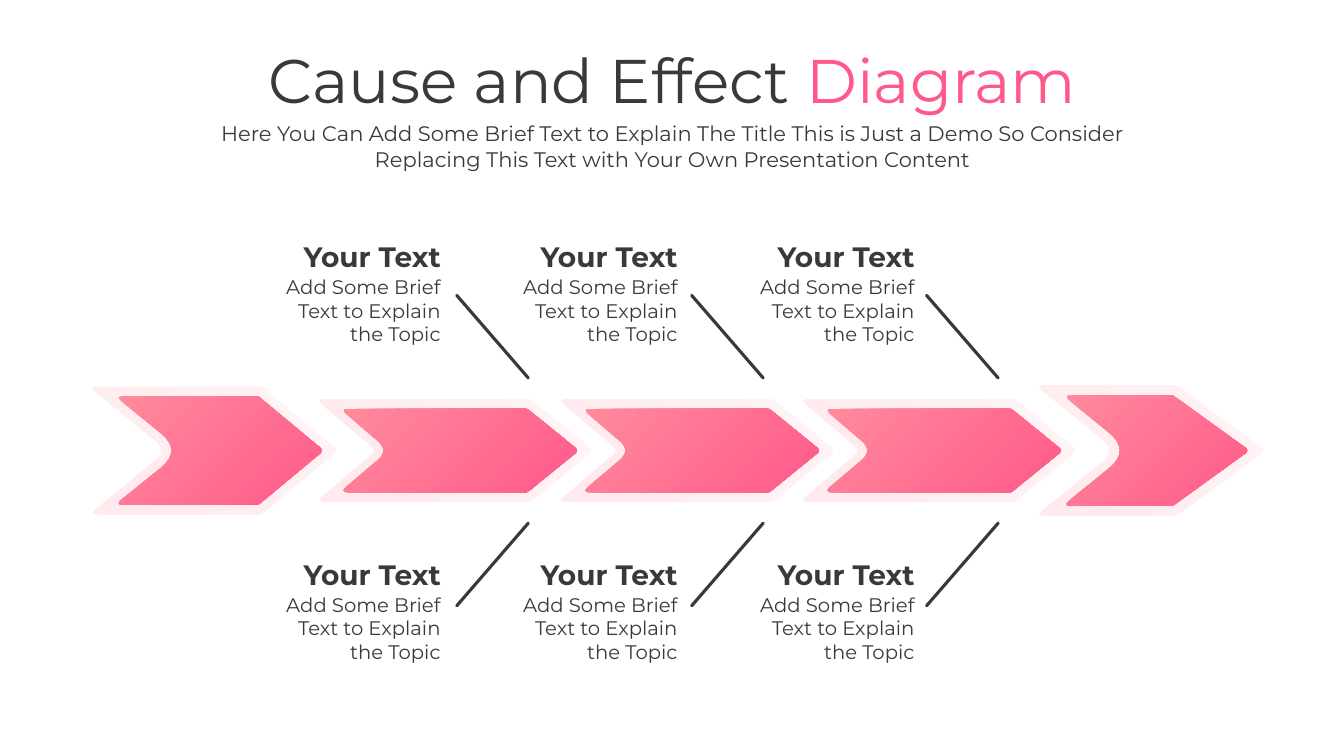
from dataclasses import dataclass

from lxml import etree
from pptx import Presentation
from pptx.dml.color import RGBColor
from pptx.enum.shapes import MSO_CONNECTOR
from pptx.enum.text import MSO_ANCHOR, MSO_AUTO_SIZE, PP_ALIGN
from pptx.oxml.ns import qn
from pptx.util import Inches, Pt

STRAIGHT = MSO_CONNECTOR.STRAIGHT
CENTER, RIGHT = PP_ALIGN.CENTER, PP_ALIGN.RIGHT
TOP, NO_FIT = MSO_ANCHOR.TOP, MSO_AUTO_SIZE.NONE


@dataclass(frozen=True)
class Theme:
    font: str = "Montserrat"
    ink: str = "3B3838"
    pink: tuple = ((0, "FF598A"), (1, "FF8A9C"))
    blush: tuple = ((0.1, "FFEBEE"), (1, "FFF3F5"))
    title: int = 44
    subtitle: int = 15
    heading: int = 20
    body: int = 14
    bone: float = 2.25


@dataclass(frozen=True)
class Box:
    left: float
    top: float
    width: float
    height: float

    @property
    def right(self):
        return self.left + self.width

    @property
    def bottom(self):
        return self.top + self.height

    @property
    def middle(self):
        return self.top + self.height / 2

    def inches(self):
        return [Inches(v) for v in (self.left, self.top, self.width, self.height)]


@dataclass(frozen=True)
class Arrow:
    """Chevron: box, shoulder distance from the tip, notch depth and its rounding."""
    box: Box
    shoulder: float
    notch: float
    notch_cut: float


THEME = Theme()
SLIDE_WIDTH, SLIDE_HEIGHT = 13.33, 7.5
AXIS = 4.47          # height of the spine
COLUMNS = 3
ARROW_STEP = 2.4
CAUSE_STEP = 2.35
BONE_STEP = 2.33
TAIL_OVERHANG, TIP_OVERHANG = 0.05, 0.02
TAIL_CUT, SHOULDER_CUT, TIP_CUT = 0.09, 0.02, 0.05
CURVE_STEPS = 8


def set_gradient(fill, stops, angle):
    fill.gradient()
    for stop, (position, color) in zip(fill.gradient_stops, stops):
        stop.position = position
        stop.color.rgb = RGBColor.from_string(color)
    fill.gradient_angle = angle


def make_radial(shape):
    """Spread the gradient in circles from the bottom right corner."""
    gradient = shape._element.spPr.find(qn("a:gradFill"))
    linear = gradient.find(qn("a:lin"))
    circle = etree.Element(qn("a:path"), path="circle")
    etree.SubElement(circle, qn("a:fillToRect"), l="100000", t="100000", r="0", b="0")
    gradient.replace(linear, circle)


def set_text(shape, box, runs, size, align, bold=False):
    """Write runs of (text, gradient stops or None) into a shape placed at box."""
    shape.left, shape.top, shape.width, shape.height = box.inches()
    frame = shape.text_frame
    frame.word_wrap = True
    frame.auto_size = NO_FIT
    frame.vertical_anchor = TOP
    paragraph = frame.paragraphs[0]
    paragraph.alignment = align
    paragraph.space_before = Pt(0)
    for text, stops in runs:
        run = paragraph.add_run()
        run.text = text
        run.font.name = THEME.font
        run.font.size = Pt(size)
        run.font.bold = bold
        if stops:
            set_gradient(run.font.fill, stops, 180)
        else:
            run.font.color.rgb = RGBColor.from_string(THEME.ink)


def toward(start, end, distance):
    length = ((end[0] - start[0]) ** 2 + (end[1] - start[1]) ** 2) ** 0.5
    return tuple(a + (b - a) * distance / length for a, b in zip(start, end))


def round_corners(corners, cuts):
    """Replace each corner by a curve that starts and ends at its cut distance."""
    points = []
    for index, (corner, cut) in enumerate(zip(corners, cuts)):
        start = toward(corner, corners[index - 1], cut)
        end = toward(corner, corners[(index + 1) % len(corners)], cut)
        for step in range(CURVE_STEPS + 1):
            t = step / CURVE_STEPS
            points.append(tuple(Inches((1 - t) ** 2 * a + 2 * t * (1 - t) * b + t ** 2 * c)
                                for a, b, c in zip(start, corner, end)))
    return points


def add_arrow(slide, arrow):
    box = arrow.box
    tail, shoulder = box.left - TAIL_OVERHANG, box.right - arrow.shoulder
    corners = [(tail, box.top), (shoulder, box.top),
               (box.right + TIP_OVERHANG, box.middle),
               (shoulder, box.bottom), (tail, box.bottom),
               (box.left + arrow.notch, box.middle)]
    cuts = [TAIL_CUT, SHOULDER_CUT, TIP_CUT, SHOULDER_CUT, TAIL_CUT, arrow.notch_cut]
    first, *others = round_corners(corners, cuts)
    builder = slide.shapes.build_freeform(*first)
    builder.add_line_segments(others, close=True)
    shape = builder.convert_to_shape()
    shape.shadow.inherit = False
    shape.line.fill.background()
    return shape


def add_spine_part(slide, halo, core):
    """A pale chevron with a pink one inside it."""
    set_gradient(add_arrow(slide, halo).fill, THEME.blush, 45)
    shape = add_arrow(slide, core)
    set_gradient(shape.fill, THEME.pink, 0)
    make_radial(shape)


def centered(left, width, height):
    return Box(left, AXIS - height / 2, width, height)


def add_spine(slide):
    # Middle segments, right to left so that each one overlaps the next
    for column in reversed(range(COLUMNS)):
        left = 3.18 + column * ARROW_STEP
        add_spine_part(slide, Arrow(centered(left, 2.68, 1.02), 0.6, 0.55, 0.07),
                       Arrow(centered(left + 0.24, 2.3, 0.83), 0.49, 0.44, 0.15))
    # Tail and head
    add_spine_part(slide, Arrow(centered(0.93, 2.4, 1.27), 0.74, 0.73, 0.16),
                   Arrow(centered(1.19, 2, 1.08), 0.63, 0.62, 0.28))
    add_spine_part(slide, Arrow(centered(10.32, 2.21, 1.3), 0.87, 0.75, 0.17),
                   Arrow(centered(10.59, 1.78, 1.1), 0.74, 0.63, 0.29))


def add_bone(slide, start, end):
    bone = slide.shapes.add_connector(STRAIGHT, *(Inches(v) for v in (*start, *end)))
    bone.line.color.rgb = RGBColor.from_string(THEME.ink)
    bone.line.width = Pt(THEME.bone)
    bone._element.spPr.find(qn("a:ln")).set("cap", "rnd")
    etree.SubElement(bone._element.spPr, qn("a:effectLst"))


def add_cause(slide, box):
    """Heading over a short explanation, both set to the right."""
    heading = Box(box.left, box.top, box.width, 0.44)
    body = Box(box.left, box.top + 0.35, box.width, box.height - 0.35)
    for part, text, size, bold in (
            (heading, "Your Text", THEME.heading, True),
            (body, "Add Some Brief Text to Explain the Topic", THEME.body, False)):
        shape = slide.shapes.add_textbox(*part.inches())
        set_text(shape, part, [(text, None)], size, RIGHT, bold)


def add_causes(slide):
    for top, side in ((2.33, -1), (5.48, 1)):
        for column in range(COLUMNS):
            add_cause(slide, Box(2.53 + column * CAUSE_STEP, top, 1.94, 1.16))
            offset = column * BONE_STEP
            add_bone(slide, (4.53 + offset, AXIS + side * 1.54),
                     (5.24 + offset, AXIS + side * 0.72))


def add_header(slide, box):
    title, subtitle = slide.placeholders
    set_text(title, Box(box.left, box.top, box.width, 0.84),
             [("Cause and Effect ", None), ("Diagram", THEME.pink)], THEME.title, CENTER)
    set_text(subtitle, Box(box.left, box.top + 0.78, box.width, 0.61),
             [("Here You Can Add Some Brief Text to Explain The Title This is Just a Demo "
               "So Consider Replacing This Text with Your Own Presentation Content", None)],
             THEME.subtitle, CENTER)


def main():
    presentation = Presentation()
    presentation.slide_width = Inches(SLIDE_WIDTH)
    presentation.slide_height = Inches(SLIDE_HEIGHT)
    slide = presentation.slides.add_slide(presentation.slide_layouts[0])
    add_header(slide, Box(1.61, 0.37, 10.12, 1.39))
    add_causes(slide)
    add_spine(slide)
    presentation.save("out.pptx")


if __name__ == "__main__":
    main()
